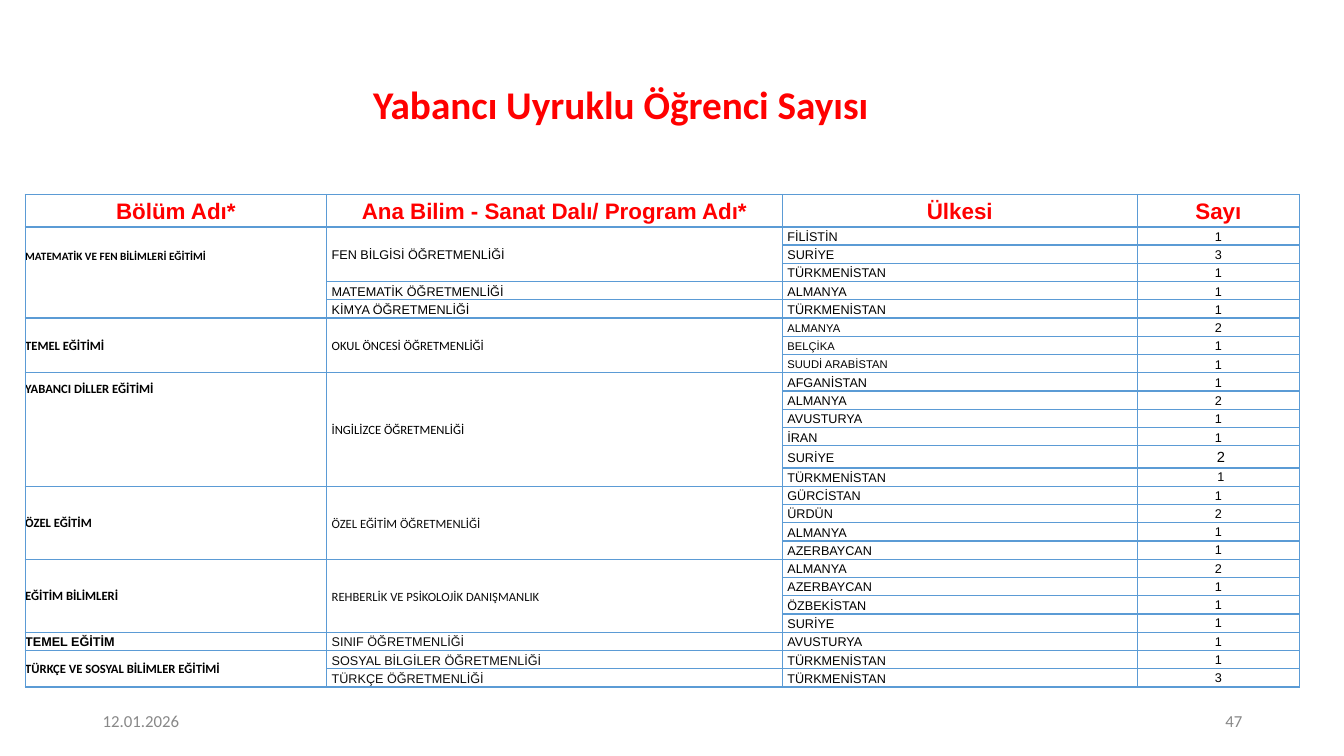
"""Builds the slide that counts foreign students by department, programme and country."""
from lxml.etree import SubElement
from pptx import Presentation
from pptx.dml.color import RGBColor
from pptx.enum.text import MSO_ANCHOR as Anchor, PP_ALIGN as Align
from pptx.oxml.ns import qn
from pptx.util import Inches, Pt

COLORS = {"red": "FF0000", "gray": "888888", "black": "000000", "ink": "0D0D0D", "rule": "5B9BD5"}
TITLE = "Yabancı Uyruklu Öğrenci Sayısı"
FOOTERS = [("12.01.2026", 0.92, Align.LEFT), ("47", 9.42, Align.RIGHT)]
HEADINGS = ["Bölüm Adı*", "Ana Bilim - Sanat Dalı/ Program Adı*", "Ülkesi", "Sayı"]
WIDTHS = [2.99, 4.52, 3.52, 1.61]
DEPARTMENTS = [
    ("MATEMATİK VE FEN BİLİMLERİ EĞİTİMİ", {"size": 8, "anchor": Anchor.TOP, "top": 0.22}, [
        ("FEN BİLGİSİ ÖĞRETMENLİĞİ", {},
         [("FİLİSTİN", "1"), ("SURİYE", "3"), ("TÜRKMENİSTAN", "1")]),
        ("MATEMATİK ÖĞRETMENLİĞİ", {}, [("ALMANYA", "1")]),
        ("KİMYA ÖĞRETMENLİĞİ", {}, [("TÜRKMENİSTAN", "1")])]),
    ("TEMEL EĞİTİMİ", {}, [
        ("OKUL ÖNCESİ ÖĞRETMENLİĞİ", {"font": "Calibri"},
         [("ALMANYA", "2"), ("BELÇİKA", "1"), ("SUUDİ ARABİSTAN", "1")])]),
    ("YABANCI DİLLER EĞİTİMİ", {"anchor": Anchor.TOP, "top": 0.08}, [
        ("İNGİLİZCE ÖĞRETMENLİĞİ", {"font": "Calibri"},
         [("AFGANİSTAN", "1"), ("ALMANYA", "2"), ("AVUSTURYA", "1"),
          ("İRAN", "1"), ("SURİYE", "2"), ("TÜRKMENİSTAN", "1")])]),
    ("ÖZEL EĞİTİM", {}, [
        ("ÖZEL EĞİTİM ÖĞRETMENLİĞİ", {"font": "Calibri", "color": "ink"},
         [("GÜRCİSTAN", "1"), ("ÜRDÜN", "2"), ("ALMANYA", "1"), ("AZERBAYCAN", "1")])]),
    ("EĞİTİM BİLİMLERİ", {}, [
        ("REHBERLİK VE PSİKOLOJİK DANIŞMANLIK", {"font": "Calibri", "color": "ink"},
         [("ALMANYA", "2"), ("AZERBAYCAN", "1"), ("ÖZBEKİSTAN", "1"), ("SURİYE", "1")])]),
    ("TEMEL EĞİTİM", {"font": "Arial"}, [
        ("SINIF ÖĞRETMENLİĞİ", {"color": "ink"}, [("AVUSTURYA", "1")])]),
    ("TÜRKÇE VE SOSYAL BİLİMLER EĞİTİMİ", {}, [
        ("SOSYAL BİLGİLER ÖĞRETMENLİĞİ", {"color": "ink"}, [("TÜRKMENİSTAN", "1")]),
        ("TÜRKÇE ÖĞRETMENLİĞİ", {"color": "ink"}, [("TÜRKMENİSTAN", "3")])]),
]
COUNTRY_FORMATS = {row: {"size": 8} for row in (6, 7, 8)}
TALL_ROW = 13
COUNT_FORMATS = {TALL_ROW: {"size": 10.5, "left": 0.05}, TALL_ROW + 1: {"left": 0.05}}
HEADER_HEIGHT, TALL_HEIGHT, TABLE_HEIGHT = 0.32, 0.22, 4.89
THICK_EDGES = {(0, column): "B" for column in range(4)}
THICK_EDGES |= {(1, column): "T" for column in range(4)}
THICK_EDGES |= {(9, 2): "B", (10, 2): "T"}


def write(frame, text, size=9, font="Arial", color="black", bold=False, align=Align.LEFT, spacing=1.07):
    """Put one formatted paragraph in a text frame."""
    paragraph = frame.paragraphs[0]
    paragraph.alignment, paragraph.line_spacing = align, spacing
    run = paragraph.add_run()
    run.text = text
    run.font.size, run.font.name, run.font.bold = Pt(size), font, bold
    run.font.color.rgb = RGBColor.from_string(COLORS[color])


def fill_cell(cell, text, left=0.05, top=0.01, right=0.05, anchor=Anchor.MIDDLE, **text_format):
    """Set the insets and the text of a table cell."""
    cell.margin_left, cell.margin_right = Inches(left), Inches(right)
    cell.margin_top, cell.margin_bottom = Inches(top), 0
    cell.vertical_anchor = anchor
    write(cell.text_frame, text, **text_format)


def rule_cell(cell, thick_edge):
    """Draw the four borders of a cell and clear its fill."""
    properties = cell._tc.get_or_add_tcPr()
    for edge in "LRTB":
        width = Pt(2 if edge == thick_edge else 1)
        line = SubElement(properties, qn(f"a:ln{edge}"), w=str(width))
        SubElement(SubElement(line, qn("a:solidFill")), qn("a:srgbClr"), val=COLORS["rule"])
    cell.fill.background()


def add_student_table(slide):
    """Lay out departments, programmes and countries in merged rows."""
    row_count = 1 + sum(len(countries) for _, _, programs in DEPARTMENTS for _, _, countries in programs)
    students = slide.shapes.add_table(row_count, len(WIDTHS), Inches(0.25), Inches(1.93),
                                      Inches(sum(WIDTHS)), Inches(TABLE_HEIGHT)).table
    students.first_row = students.horz_banding = False
    for column, width in zip(students.columns, WIDTHS):
        column.width = Inches(width)
    body_height = (TABLE_HEIGHT - HEADER_HEIGHT - TALL_HEIGHT) / (row_count - 2)
    special_heights = {0: HEADER_HEIGHT, TALL_ROW: TALL_HEIGHT}
    for index, row in enumerate(students.rows):
        row.height = Inches(special_heights.get(index, body_height))
        for column, cell in enumerate(row.cells):
            rule_cell(cell, THICK_EDGES.get((index, column)))

    for column, heading in enumerate(HEADINGS):
        fill_cell(students.cell(0, column), heading, size=16, color="red", bold=True, align=Align.CENTER)
    row = 1
    for department, department_format, programs in DEPARTMENTS:
        department_row = row
        for program, program_format, countries in programs:
            program_row = row
            for country, count in countries:
                fill_cell(students.cell(row, 2), country, **COUNTRY_FORMATS.get(row, {}))
                count_format = {"left": 0, "right": 0, "top": 0.01 if row < TALL_ROW else 0}
                fill_cell(students.cell(row, 3), count, align=Align.CENTER,
                          **(count_format | COUNT_FORMATS.get(row, {})))
                row += 1
            if row - program_row > 1:
                students.cell(program_row, 1).merge(students.cell(row - 1, 1))
            fill_cell(students.cell(program_row, 1), program, **program_format)
        if row - department_row > 1:
            students.cell(department_row, 0).merge(students.cell(row - 1, 0))
        base_format = {"left": 0, "top": 0, "right": 0, "font": "Calibri", "bold": True}
        fill_cell(students.cell(department_row, 0), department, **(base_format | department_format))


def main():
    """Build and save the slide."""
    deck = Presentation()
    deck.slide_width, deck.slide_height = Inches(13.33), Inches(7.5)
    slide = deck.slides.add_slide(deck.slide_layouts[5])
    title = slide.shapes.title
    title.left, title.top, title.width, title.height = map(Inches, (0.52, 0.78, 11.27, 0.56))
    title.text_frame.vertical_anchor = Anchor.MIDDLE
    write(title.text_frame, TITLE, size=28, font="Calibri", color="red", bold=True,
          align=Align.CENTER, spacing=0.9)
    add_student_table(slide)
    for footer, left, align in FOOTERS:
        frame = slide.shapes.add_textbox(Inches(left), Inches(6.95), Inches(3), Inches(0.4)).text_frame
        frame.word_wrap, frame.vertical_anchor = True, Anchor.MIDDLE
        write(frame, footer, size=12, font="Calibri", color="gray", align=align, spacing=1.0)
    deck.save("out.pptx")


if __name__ == "__main__":
    main()
